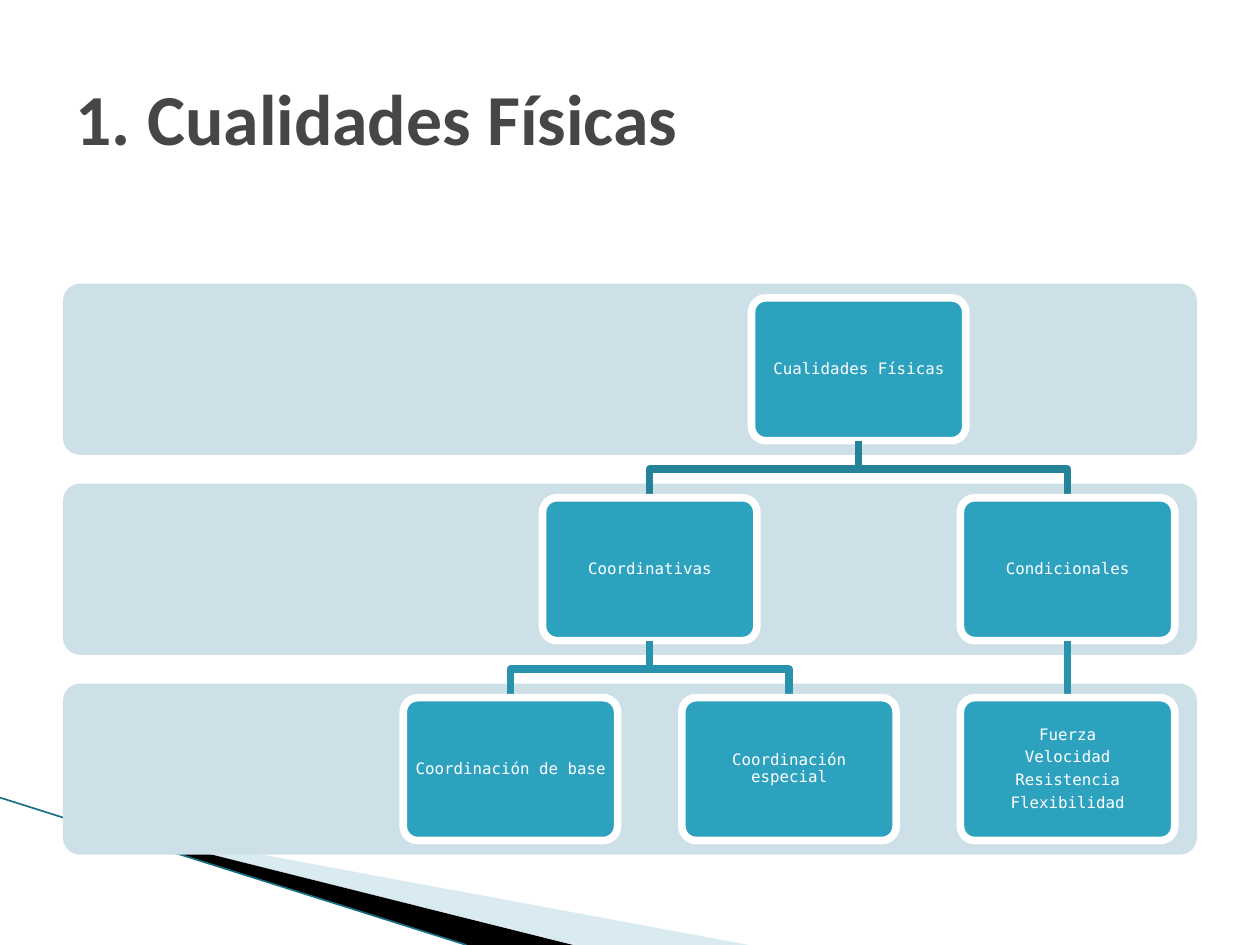
import pptx
import pptx.dml.color
import pptx.enum.shapes
import pptx.enum.text
import pptx.oxml
import pptx.oxml.ns
import pptx.util
from dataclasses import dataclass
from pptx.util import Cm, Pt


@dataclass(frozen=True)
class Theme:
    title_color: str = "464646"
    band_color: str = "CDE0E8"
    box_color: str = "2DA2BF"
    white: str = "FFFFFF"
    black: str = "000000"
    wedge_color: str = "A0CBDC"
    edge_color: str = "1B6F85"
    link_colors: tuple = ("248299", "2993AD")
    title_font: str = "Calibri"
    box_font: str = "DejaVu Sans Mono"
    title_size: float = 41
    box_size: float = 9
    link_width: float = 4.33
    edge_width: float = 0.95


@dataclass(frozen=True)
class Node:
    lines: tuple
    children: tuple = ()


THEME = Theme()
TREE = Node(("Cualidades Físicas",), (
    Node(("Coordinativas",), (
        Node(("Coordinación de base",)),
        Node(("Coordinación especial",)),
    )),
    Node(("Condicionales",), (
        Node(("Fuerza", "Velocidad", "Resistencia", "Flexibilidad")),
    )),
))

# Diagram measures in centimetres
BAND_HEIGHT, ROW_PITCH = 3.45, 4.03
BOX_WIDTH, BOX_HEIGHT = 4.32, 2.88
COLUMN_PITCH = 1.3 * BOX_WIDTH
TREE_INDENT = 6.86


def rgb(value):
    return pptx.dml.color.RGBColor.from_string(value)


def paint(shape, fill=None, line=None, width=0):
    shape.shadow.inherit = False
    if fill:
        shape.fill.solid()
        shape.fill.fore_color.rgb = rgb(fill)
    else:
        shape.fill.background()
    if line:
        shape.line.color.rgb = rgb(line)
        shape.line.width = Pt(width)
    else:
        shape.line.fill.background()


def add_path(slide, points, close):
    start, *others = [(Cm(x), Cm(y)) for x, y in points]
    builder = slide.shapes.build_freeform(*start)
    builder.add_line_segments(others, close=close)
    return builder.convert_to_shape()


def add_line(slide, start, end, color, width):
    connector = slide.shapes.add_connector(
        pptx.enum.shapes.MSO_CONNECTOR.STRAIGHT,
        Cm(start[0]), Cm(start[1]), Cm(end[0]), Cm(end[1]))
    connector.line.color.rgb = rgb(color)
    connector.line.width = Pt(width)
    connector._element.spPr.append(pptx.oxml.parse_xml(
        f'<a:effectLst {pptx.oxml.ns.nsdecls("a")}/>'))
    return connector


def add_rounded(slide, left, top, width, height):
    shape = slide.shapes.add_shape(
        pptx.enum.shapes.MSO_SHAPE.ROUNDED_RECTANGLE,
        Cm(left), Cm(top), Cm(width), Cm(height))
    shape.adjustments[0] = 0.1
    return shape


def add_corner(slide, left, top, height):
    """Wedges and edge line in the bottom left corner."""
    bottom = top + height
    apex = (left + 1.4, top + 0.43)
    wedge = add_path(
        slide, [apex, (left + 15.1, bottom), (left + 11.58, bottom)], True)
    paint(wedge, THEME.wedge_color)
    color = wedge._element.spPr.find(".//" + pptx.oxml.ns.qn("a:srgbClr"))
    color.append(pptx.oxml.parse_xml(
        f'<a:alpha {pptx.oxml.ns.nsdecls("a")} val="40000"/>'))
    band = add_path(
        slide, [apex, (left + 11.55, bottom), (left + 9.4, bottom)], True)
    paint(band, THEME.black)
    add_line(slide, (left, top), (left + 9.4, bottom),
             THEME.edge_color, THEME.edge_width)


def add_title(slide, left, top, width, height):
    title = slide.shapes.title
    title.left, title.top = Cm(left), Cm(top)
    title.width, title.height = Cm(width), Cm(height)
    title.text_frame.text = "1. Cualidades Físicas"
    title.text_frame.vertical_anchor = pptx.enum.text.MSO_ANCHOR.MIDDLE
    paragraph = title.text_frame.paragraphs[0]
    paragraph.alignment = pptx.enum.text.PP_ALIGN.LEFT
    font = paragraph.font
    font.name, font.size, font.bold = THEME.title_font, Pt(THEME.title_size), True
    font.color.rgb = rgb(THEME.title_color)


def add_box(slide, center, top, lines):
    box = add_rounded(slide, center - BOX_WIDTH / 2, top, BOX_WIDTH, BOX_HEIGHT)
    paint(box, THEME.box_color, THEME.white, THEME.link_width)
    frame = box.text_frame
    frame.word_wrap = True
    frame.vertical_anchor = pptx.enum.text.MSO_ANCHOR.MIDDLE
    frame.margin_left = frame.margin_right = Cm(0.1)
    frame.margin_top = frame.margin_bottom = Cm(0.1)
    frame.text = "\n".join(lines)
    for paragraph in frame.paragraphs:
        paragraph.alignment = pptx.enum.text.PP_ALIGN.CENTER
        paragraph.line_spacing = 0.9
        paragraph.space_after = Pt(3.15)
        paragraph.font.name = THEME.box_font
        paragraph.font.size = Pt(THEME.box_size)
        paragraph.font.color.rgb = rgb(THEME.white)
    return box


def count_leaves(node):
    return sum(map(count_leaves, node.children)) or 1


def find_column(node, first):
    """Column of a node, centred over its outer children."""
    if not node.children:
        return first
    last = node.children[-1]
    last_first = first + count_leaves(node) - count_leaves(last)
    return (find_column(node.children[0], first)
            + find_column(last, last_first)) / 2


def add_branch(slide, node, left, top, first=0, level=0):
    """Box of a node, then each link and the branch below it."""
    def center_of(member, column):
        return left + BOX_WIDTH / 2 + find_column(member, column) * COLUMN_PITCH

    center = center_of(node, first)
    box = add_box(slide, center, top, node.lines)
    bottom, next_top = top + BOX_HEIGHT, top + ROW_PITCH
    middle = (bottom + next_top) / 2
    for child in node.children:
        target = center_of(child, first)
        color = THEME.link_colors[level]
        straight = len(node.children) == 1
        if straight:
            link = add_line(slide, (center, bottom), (target, next_top),
                            color, THEME.link_width)
        else:
            link = add_path(slide, [(center, bottom), (center, middle),
                                    (target, middle), (target, next_top)], False)
            paint(link, line=color, width=THEME.link_width)
        child_box = add_branch(slide, child, left, next_top, first, level + 1)
        if straight:
            link.begin_connect(box, 2)
            link.end_connect(child_box, 0)
        first += count_leaves(child)
    return box


def add_hierarchy(slide, left, top, width):
    for row in range(3):
        band = add_rounded(slide, left, top + row * ROW_PITCH, width, BAND_HEIGHT)
        paint(band, THEME.band_color)
    add_branch(slide, TREE, left + TREE_INDENT,
               top + (BAND_HEIGHT - BOX_HEIGHT) / 2)


def main():
    presentation = pptx.Presentation()
    presentation.slide_width, presentation.slide_height = Cm(25.4), Cm(19.05)
    slide = presentation.slides.add_slide(presentation.slide_layouts[5])
    add_corner(slide, 0, 16.08, 2.97)
    add_title(slide, 1.27, 0.76, 22.86, 3.18)
    add_hierarchy(slide, 1.27, 5.72, 22.86)
    presentation.save("out.pptx")


if __name__ == "__main__":
    main()
